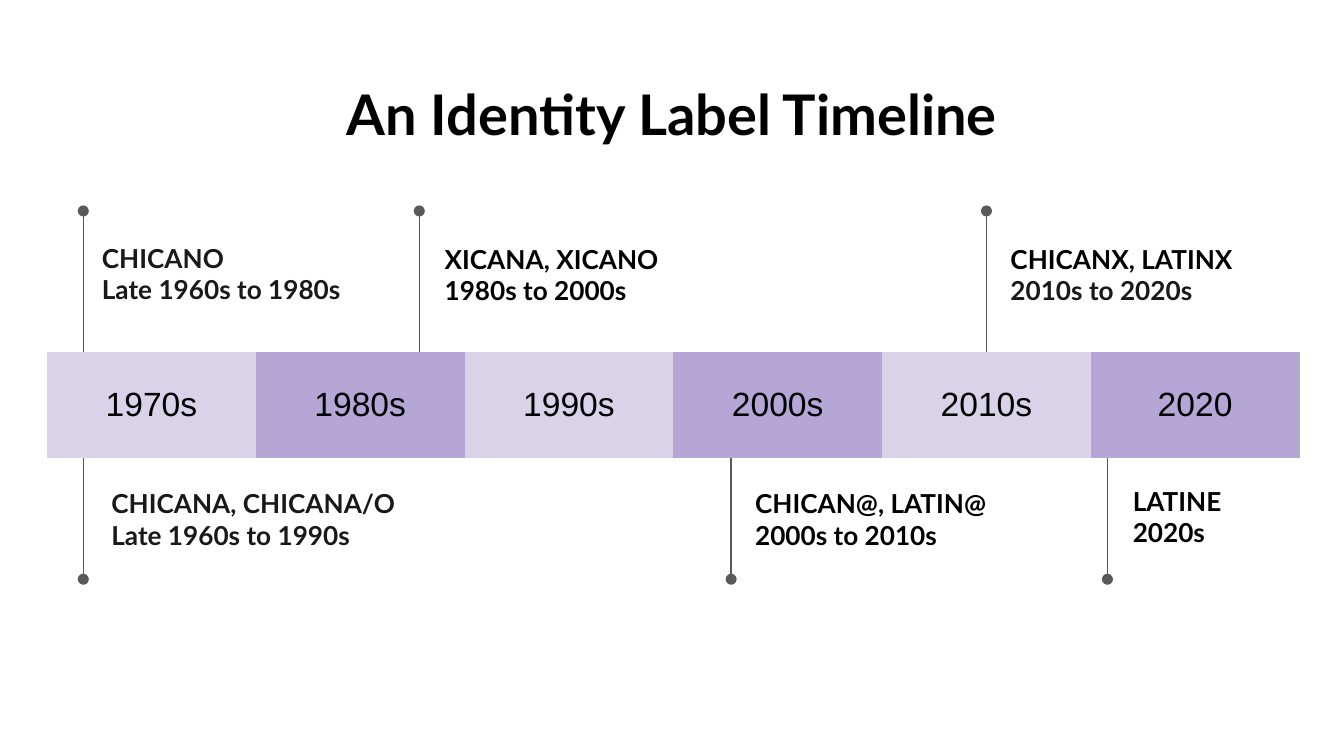
import pptx
import pptx.dml.color
import pptx.enum.shapes
import pptx.enum.text
import pptx.oxml
import pptx.oxml.ns
import pptx.util
import lxml.etree

Inches = pptx.util.Inches
RGBColor = pptx.dml.color.RGBColor
PP_ALIGN = pptx.enum.text.PP_ALIGN
MSO_ANCHOR = pptx.enum.text.MSO_ANCHOR

BLACK = RGBColor(0x00, 0x00, 0x00)
CHARCOAL = RGBColor(0x19, 0x19, 0x19)
GRAY = RGBColor(0x59, 0x59, 0x59)
LAVENDER = RGBColor(0xD9, 0xD2, 0xE9)
PURPLE = RGBColor(0xB4, 0xA7, 0xD6)

PLAIN_TABLE_STYLE = "{2D5ABB26-0587-4C30-8999-92F81FD0307C}"
INSETS = ("margin_left", "margin_top", "margin_right", "margin_bottom")
TITLE_FONT = {"name": "Lato", "size": pptx.util.Pt(30), "bold": True}
LABEL_FONT = {"name": "Lato", "size": pptx.util.Pt(14), "bold": True}
DECADE_FONT = {"name": "Arial", "size": pptx.util.Pt(18), "bold": False}

DECADES = ["1970s", "1980s", "1990s", "2000s", "2010s", "2020"]
BAND = (0.35, 2.62, 9.32, 0.79)
STEM_ABOVE = 1.05
STEM_BELOW = 0.9

ERAS = [
    (0.62, "above", (0.66, 1.70, 2.19, 0.79),
     [[("CHICANO", CHARCOAL), ("Late 1960s to 1980s", CHARCOAL)]]),
    (0.62, "below", (0.73, 3.53, 2.39, 0.63),
     [[("CHICANA, CHICANA/O", CHARCOAL), ("Late 1960s to 1990s", CHARCOAL)]]),
    (3.12, "above", (3.21, 1.71, 2.19, 0.68),
     [[("XICANA, XICANO", BLACK)], [("1980s to 2000s", BLACK)]]),
    (5.44, "below", (5.52, 3.53, 2.19, 0.79),
     [[("CHICAN@, LATIN@", BLACK), ("2000s to 2010s", BLACK)]]),
    (7.34, "above", (7.42, 1.71, 2.19, 0.79),
     [[("CHICANX, LATINX", BLACK), ("2010s to 2020s", CHARCOAL)]]),
    (8.24, "below", (8.33, 3.51, 0.89, 0.68),
     [[("LATINE", BLACK)], [("2020s", BLACK)]]),
]


def set_all(target, values):
    for name, value in values.items():
        setattr(target, name, value)


def write_lines(paragraph, lines, font, align=PP_ALIGN.LEFT):
    paragraph.alignment = align
    for index, (wording, color) in enumerate(lines):
        if index:
            paragraph.add_line_break()
        run = paragraph.add_run()
        run.text = wording
        set_all(run.font, font)
        run.font.color.rgb = color


def prepare_frame(frame):
    set_all(frame, dict.fromkeys(INSETS, Inches(0.1)))
    set_all(frame, {
        "word_wrap": True,
        "auto_size": pptx.enum.text.MSO_AUTO_SIZE.NONE,
        "vertical_anchor": MSO_ANCHOR.TOP,
    })


def add_heading(slide, box, wording):
    heading = slide.shapes.title
    set_all(heading, dict(zip(("left", "top", "width", "height"), map(Inches, box))))
    prepare_frame(heading.text_frame)
    write_lines(heading.text_frame.paragraphs[0], [(wording, BLACK)], TITLE_FONT,
                PP_ALIGN.CENTER)


def add_decade_band(slide, box, decades):
    band = slide.shapes.add_table(1, len(decades), *map(Inches, box)).table
    set_all(band, {"first_row": False, "horz_banding": False})
    style = band._tbl.tblPr.find(pptx.oxml.ns.qn("a:tableStyleId"))
    style.text = PLAIN_TABLE_STYLE
    for index, decade in enumerate(decades):
        band.columns[index].width = Inches(box[2] / len(decades))
        cell = band.cell(0, index)
        set_all(cell, dict.fromkeys(INSETS, Inches(0.1)))
        cell.vertical_anchor = MSO_ANCHOR.MIDDLE
        cell.fill.solid()
        cell.fill.fore_color.rgb = PURPLE if index % 2 else LAVENDER
        write_lines(cell.text_frame.paragraphs[0], [(decade, BLACK)], DECADE_FONT,
                    PP_ALIGN.CENTER)


def add_pin(slide, x, start, end):
    pin = slide.shapes.add_connector(
        pptx.enum.shapes.MSO_CONNECTOR.STRAIGHT,
        Inches(x), Inches(start), Inches(x), Inches(end))
    pin.line.color.rgb = GRAY
    pin.line.width = pptx.util.Pt(0.75)
    qn = pptx.oxml.ns.qn
    lxml.etree.SubElement(pin.line._get_or_add_ln(), qn("a:tailEnd"), type="oval")
    lxml.etree.SubElement(pin._element.spPr, qn("a:effectLst"))


def add_era(slide, band, x, side, label_box, label):
    top, bottom = band[1], band[1] + band[3]
    if side == "above":
        add_pin(slide, x, top, top - STEM_ABOVE)
    else:
        add_pin(slide, x, bottom, bottom + STEM_BELOW)
    frame = slide.shapes.add_textbox(*map(Inches, label_box)).text_frame
    prepare_frame(frame)
    for index, lines in enumerate(label):
        paragraph = frame.add_paragraph() if index else frame.paragraphs[0]
        write_lines(paragraph, lines, LABEL_FONT)


def main():
    deck = pptx.Presentation()
    width = Inches(10)
    set_all(deck, {"slide_width": width, "slide_height": width * 9 // 16})
    slide = deck.slides.add_slide(deck.slide_layouts[5])
    add_heading(slide, (0.34, 0.49, 9.32, 0.63), "An Identity Label Timeline")
    add_decade_band(slide, BAND, DECADES)
    for era in ERAS:
        add_era(slide, BAND, *era)
    deck.save("out.pptx")


if __name__ == "__main__":
    main()
